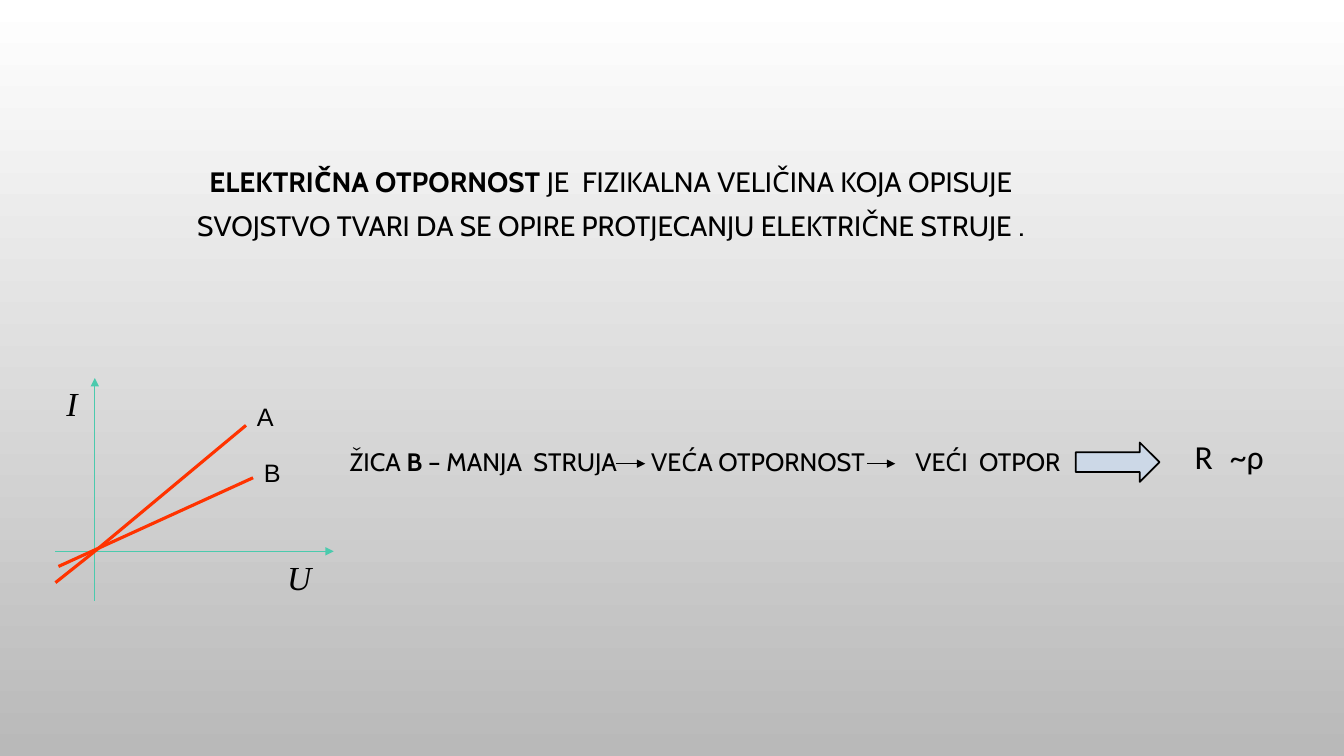
from lxml.etree import SubElement
from pptx import Presentation
from pptx.dml.color import RGBColor
from pptx.enum.shapes import MSO_CONNECTOR, MSO_SHAPE
from pptx.enum.text import MSO_ANCHOR, PP_ALIGN
from pptx.oxml.ns import qn
from pptx.util import Inches, Pt

BLACK, AXIS, WIRE = "000000", "4BCAAD", "FF3300"
BACKGROUND = ("FFFFFF", "B9B9B9")

DEFINITION = [
    ("ELEKTRIČNA OTPORNOST", True, 20),
    (" JE  FIZIKALNA VELIČINA KOJA OPISUJE SVOJSTVO TVARI "
     "DA SE OPIRE PROTJECANJU ELEKTRIČNE STRUJE ", False, 20),
    (".", False, 22),
]
CONCLUSION = [
    ("ŽICA ", False, 18),
    ("B ", True, 18),
    ("– MANJA  STRUJA\tVEĆA OTPORNOST\tVEĆI  OTPOR", False, 18),
]
PROPORTION = [("R\t~ρ", False, 24)]

GRAPH_LABELS = [
    ("U", 2.75, 5.48, 0.51, 0.5, "Times New Roman", 24),
    ("I", 0.56, 3.75, 0.38, 0.5, "Times New Roman", 24),
    ("B", 2.52, 4.49, 0.27, 0.4, "Arial", 18),
    ("A", 2.45, 3.93, 0.27, 0.4, "Arial", 18),
]
LINES = [
    ((0.94, 5.96), (0.94, 3.75), AXIS, 0.75, True),
    ((0.55, 5.47), (3.31, 5.47), AXIS, 0.75, True),
    ((0.94, 5.47), (2.44, 4.22), WIRE, 2.25, False),
    ((0.55, 5.78), (0.94, 5.47), WIRE, 2.25, False),
    ((0.58, 5.62), (2.51, 4.74), WIRE, 2.25, False),
    ((6.11, 4.6), (6.4, 4.6), BLACK, 0.75, True),
    ((8.6, 4.6), (8.88, 4.6), BLACK, 0.75, True),
]


def color(value):
    return RGBColor.from_string(value)


def add_text(slide, box, runs, font_name, tabs=()):
    shape = slide.shapes.add_textbox(*map(Inches, box))
    shape.text_frame.word_wrap = True
    paragraph = shape.text_frame.paragraphs[0]
    if tabs:
        tab_list = SubElement(paragraph._p.get_or_add_pPr(), qn("a:tabLst"))
        for position in tabs:
            SubElement(tab_list, qn("a:tab"), pos=str(Inches(position)), algn="l")
    paragraph.font.name = font_name
    paragraph.font.color.rgb = color(BLACK)
    for text, bold, size in runs:
        run = paragraph.add_run()
        run.text = text
        run.font.bold = bold
        run.font.size = Pt(size)
    return shape.text_frame


def add_line(slide, start, end, line_color, width, arrow):
    connector = slide.shapes.add_connector(
        MSO_CONNECTOR.STRAIGHT, *map(Inches, start + end))
    connector.line.color.rgb = color(line_color)
    connector.line.width = Pt(width)
    if arrow:
        SubElement(connector.line._get_or_add_ln(), qn("a:tailEnd"), type="triangle")
    SubElement(connector._element.spPr, qn("a:effectLst"))


def main():
    presentation = Presentation()
    presentation.slide_width = Inches(13.33)
    presentation.slide_height = Inches(7.5)
    slide = presentation.slides.add_slide(presentation.slide_layouts[6])

    fill = slide.background.fill
    fill.gradient()
    fill.gradient_angle = 270
    for stop, value in zip(fill.gradient_stops, BACKGROUND):
        stop.color.rgb = color(value)

    definition = add_text(slide, (1.31, 1.52, 9.5, 1.5), DEFINITION, "Cabin")
    definition.paragraphs[0].alignment = PP_ALIGN.CENTER
    definition.paragraphs[0].line_spacing = 1.2

    for line in LINES:
        add_line(slide, *line)
    for text, left, top, width, height, font_name, size in GRAPH_LABELS:
        label = add_text(slide, (left, top, width, height),
                         [(text, False, size)], font_name)
        label.margin_right = 0
        if font_name == "Times New Roman":
            label.vertical_anchor = MSO_ANCHOR.MIDDLE
            label.paragraphs[0].runs[0].font.italic = True

    add_text(slide, (3.37, 4.38, 7.54, 0.71), CONCLUSION, "Cabin", (2.99, 5.61))
    add_text(slide, (11.75, 4.28, 0.93, 0.5), PROPORTION, "Calibri", (0.35,))

    arrow = slide.shapes.add_shape(
        MSO_SHAPE.RIGHT_ARROW, *map(Inches, (10.67, 4.39, 0.83, 0.39)))
    arrow.shadow.inherit = False
    arrow.fill.solid()
    arrow.fill.fore_color.rgb = color("CCD8E7")
    arrow.line.color.rgb = color(BLACK)
    arrow.line.width = Pt(1.25)

    presentation.save("out.pptx")


if __name__ == "__main__":
    main()
